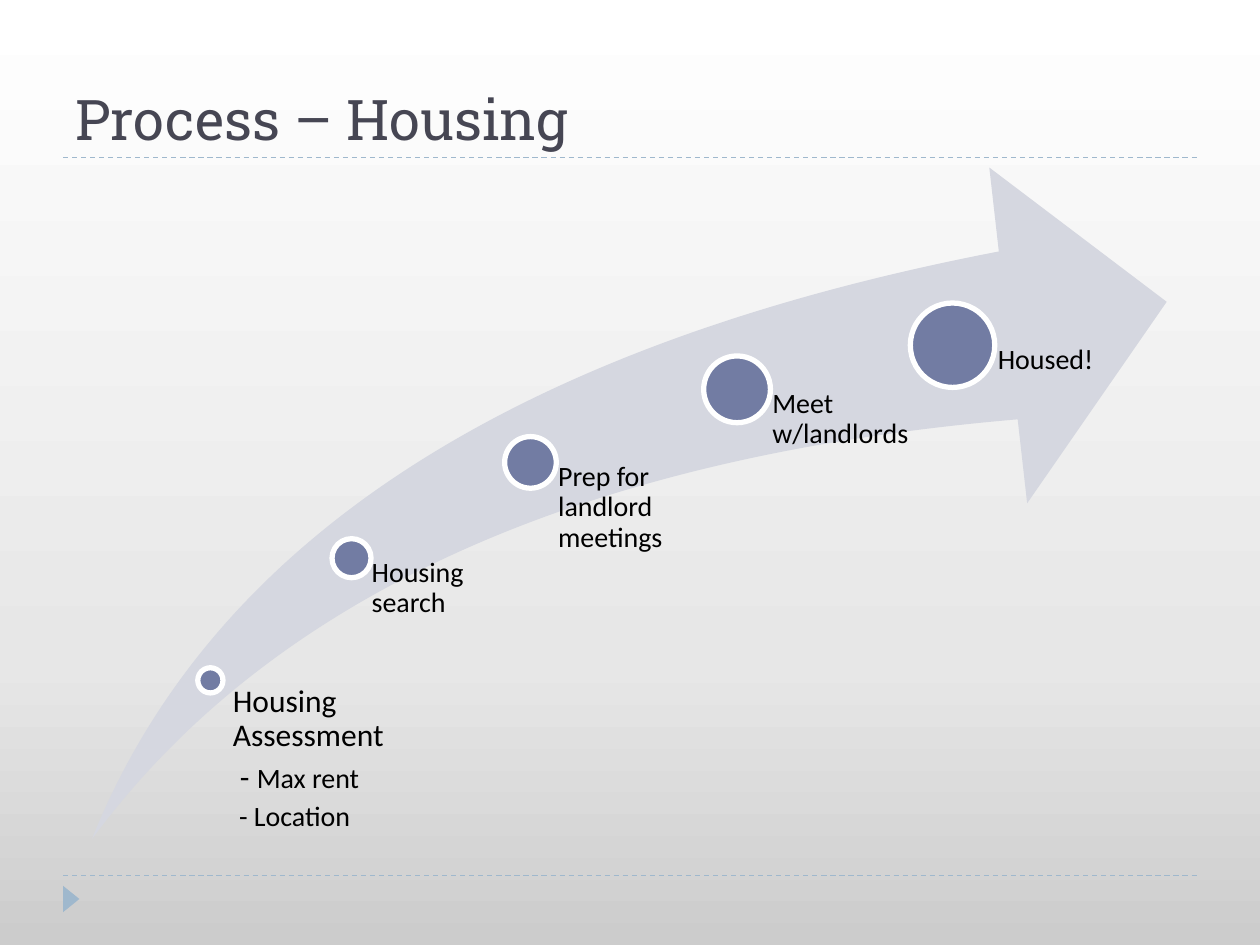
import copy
import pptx
import pptx.util
import pptx.dml.color
import pptx.enum.dml
import pptx.enum.shapes
import pptx.enum.text
import pptx.oxml.ns
from lxml import etree

MSO = pptx.enum.shapes.MSO_SHAPE
ANCHOR = pptx.enum.text.MSO_ANCHOR
COLS, ROWS = 100, 75


def rgb(value):
    return pptx.dml.color.RGBColor.from_string(value)


def add_run(p, text, size=16, font="Calibri", color="000000"):
    r = p.add_run()
    r.text = text
    r.font.size = pptx.util.Pt(size)
    r.font.name = font
    r.font.color.rgb = rgb(color)


class Deck:
    ACCENT = "727CA3"
    PALE = "D5D7E0"
    RULE = "9FB8CD"
    TITLE = "464653"
    WHITE = "FFFFFF"

    def __init__(self):
        self.prs = pptx.Presentation()
        self.prs.slide_width = pptx.util.Inches(10)
        self.prs.slide_height = pptx.util.Inches(7.5)
        self.s = self.prs.slides.add_slide(self.prs.slide_layouts[6])

    def x(self, cols):
        return round(self.prs.slide_width * cols / COLS)

    def y(self, rows):
        return round(self.prs.slide_height * rows / ROWS)

    def box(self, left, top, width, height):
        return self.x(left), self.y(top), self.x(width), self.y(height)

    def background(self, stops):
        fill = self.s.background.fill
        fill.gradient()
        fill.gradient_angle = 90
        gs_list = self.s.element.xpath(".//a:gsLst")[0]
        while len(gs_list) < len(stops):
            gs_list.append(copy.deepcopy(gs_list[0]))
        for stop, (position, color) in zip(fill.gradient_stops, stops):
            stop.position = position
            stop.color.rgb = rgb(color)

    def rule(self, row, left=5, right=95):
        sp = self.s.shapes.add_connector(
            pptx.enum.shapes.MSO_CONNECTOR.STRAIGHT,
            self.x(left), self.y(row), self.x(right), self.y(row))
        sp.line.color.rgb = rgb(self.RULE)
        sp.line.width = pptx.util.Pt(0.75)
        sp.line.dash_style = pptx.enum.dml.MSO_LINE.DASH
        etree.SubElement(sp.element.spPr, pptx.oxml.ns.qn("a:effectLst"))

    def shape(self, kind, box, fill, outline=None):
        sp = self.s.shapes.add_shape(kind, *self.box(*box))
        sp.shadow.inherit = False
        sp.fill.solid()
        sp.fill.fore_color.rgb = rgb(fill)
        if outline:
            sp.line.color.rgb = rgb(outline)
            sp.line.width = pptx.util.Pt(3)
        else:
            sp.line.fill.background()
        return sp

    def text(self, box, paragraphs, anchor=ANCHOR.TOP, inset=None, spacing=None):
        tf = self.s.shapes.add_textbox(*self.box(*box)).text_frame
        tf.word_wrap = True
        tf.vertical_anchor = anchor
        if inset is not None:
            tf.margin_left = self.x(inset)
            tf.margin_top = tf.margin_right = tf.margin_bottom = 0
        for i, runs in enumerate(paragraphs):
            p = tf.add_paragraph() if i else tf.paragraphs[0]
            if spacing:
                p.space_after = pptx.util.Pt(2)
                if i == 0:
                    p.line_spacing = spacing
            for content, style in runs:
                add_run(p, content, **style)

    def step(self, cx, cy, size, width, inset, paragraphs, nudge=(0, 0)):
        self.shape(MSO.OVAL, (cx - size / 2, cy - size / 2, size, size),
                   self.ACCENT, self.WHITE)
        left, top = cx + nudge[0], cy + nudge[1]
        self.text((left, top, width, 66.6 - top), paragraphs,
                  inset=inset, spacing=0.9)


def main():
    d = Deck()
    d.background([(0, "CCCCCC"), (0.3, "E7E7E7"), (1, "FFFFFF")])
    d.rule(69.5)
    d.rule(12.5)
    d.shape(MSO.ISOSCELES_TRIANGLE, (4.6, 70.7, 2.1, 1.3), d.RULE).rotation = 90
    d.text((5, 1.7, 90, 10.8),
           [[("Process – Housing",
              dict(size=32, font="Roboto Slab", color=d.TITLE))]],
           anchor=ANCHOR.BOTTOM)

    arrow = d.shape(MSO.SWOOSH_ARROW, (7.3, 13.3, 85.3, 53.3), d.PALE)
    arrow.adjustments[0] = arrow.adjustments[1] = 0.25

    large = dict(size=18)
    d.step(16.7, 54, 2, 17, 1,
           [[("Housing Assessment", large)],
            [(" - ", large), ("Max rent", {})],
            [(" - Location", {})]],
           nudge=(0.8, 0.4))
    steps = [
        (27.9, 44.3, 3.1, 14.2, 1.6, "Housing search"),
        (42.1, 36.7, 4.1, 16.5, 2.2, "Prep for landlord meetings"),
        (58.5, 30.9, 5.3, 17.1, 2.8, "Meet w/landlords"),
        (75.6, 27.4, 6.7, 17.1, 3.6, "Housed!"),
    ]
    for *place, label in steps:
        d.step(*place, [[(label, {})]])

    d.prs.save("out.pptx")


if __name__ == "__main__":
    main()
